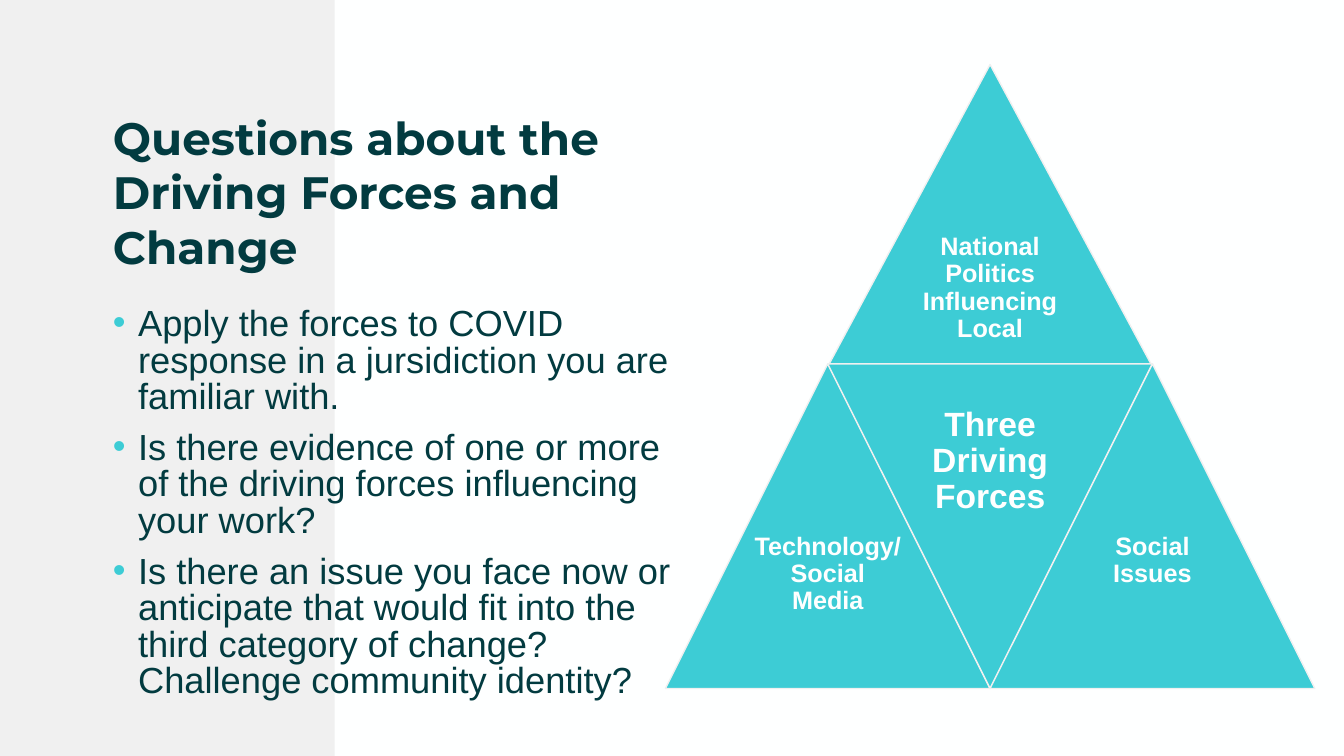
from lxml import etree
from pptx import Presentation
from pptx.dml.color import RGBColor
from pptx.enum import shapes, text
from pptx.oxml import ns
from pptx.util import Inches, Pt

TEAL = RGBColor(0x3D, 0xCC, 0xD5)
DARK = RGBColor(0x02, 0x3B, 0x40)
GREY = RGBColor(0xF0, 0xF0, 0xF0)
WHITE = RGBColor(0xFE, 0xFF, 0xFF)


def add_text(lines, box, size, color=WHITE, font="Arial", bold=True,
             align=text.PP_ALIGN.CENTER, anchor=text.MSO_ANCHOR.TOP,
             pads=(0.07, 0.07, 0.07, 0.07), pitch=0.9, gap=0, bullet=None):
    """Add a text box; pads run left, top, right, bottom in inches."""
    frame = slide.shapes.add_textbox(*map(Inches, box)).text_frame
    frame.word_wrap = True
    frame.vertical_anchor = anchor
    (frame.margin_left, frame.margin_top,
     frame.margin_right, frame.margin_bottom) = map(Inches, pads)
    for i, line in enumerate(lines):
        para = frame.paragraphs[0] if i == 0 else frame.add_paragraph()
        para.alignment = align
        para.line_spacing = pitch
        para.space_before = Pt(gap if i else 0)
        if bullet:
            props = para._p.get_or_add_pPr()
            props.set("marL", str(Inches(0.25)))
            props.set("indent", str(-Inches(0.25)))
            tint = etree.SubElement(props, ns.qn("a:buClr"))
            etree.SubElement(tint, ns.qn("a:srgbClr"), val=str(bullet))
            etree.SubElement(props, ns.qn("a:buFont"), typeface="Arial")
            etree.SubElement(props, ns.qn("a:buChar"), char="•")
        run = para.add_run()
        run.text = line
        run.font.name = font
        run.font.size = Pt(size)
        run.font.bold = bold
        run.font.color.rgb = color


def add_shape(kind, box, fill, line=None):
    shape = slide.shapes.add_shape(kind, *map(Inches, box))
    shape.shadow.inherit = False
    shape.fill.solid()
    shape.fill.fore_color.rgb = fill
    if line:
        shape.line.color.rgb = line
        shape.line.width = Pt(1)
    else:
        shape.line.fill.background()
    return shape


deck = Presentation()
deck.slide_width, deck.slide_height = Inches(13.33), Inches(7.5)
slide = deck.slides.add_slide(deck.slide_layouts[6])
slide.background.fill.solid()
slide.background.fill.fore_color.rgb = WHITE

add_shape(shapes.MSO_SHAPE.RECTANGLE, (0, 0, 3.32, 7.5), GREY)
add_text(["Questions about the Driving Forces and Change"],
         (1.12, 0.88, 5.01, 1.96), 32.4, color=DARK, font="Montserrat",
         align=text.PP_ALIGN.LEFT, pads=(0, 0.21, 0, 0), pitch=1.0)
add_text(["Apply the forces to COVID response in a jursidiction you are familiar with.",
          "Is there evidence of one or more of the driving forces influencing your work?",
          "Is there an issue you face now or anticipate that would fit into the "
          "third category of change? Challenge community identity?"],
         (1.12, 3.05, 5.73, 3.81), 25.9, color=DARK, bold=False,
         align=text.PP_ALIGN.LEFT, pads=(0, 0, 0, 0), pitch=0.84, gap=10, bullet=TEAL)

# Four triangles: one on top, three below, the middle one upside down
SIDE = 3.22
MID = 9.82
BASE = 3.61
forces = [
    ("National Politics Influencing Local", MID, 0.64, 3.46, False),
    ("Technology/ Social Media", MID - SIDE / 2, BASE, SIDE, False),
    ("Three Driving Forces", MID, BASE, SIDE, True),
    ("Social Issues", MID + SIDE / 2, BASE, SIDE, False),
]
for label, center, top, width, flip in forces:
    tri = add_shape(shapes.MSO_SHAPE.ISOSCELES_TRIANGLE,
                    (center - width / 2, top, width, SIDE), TEAL, GREY)
    left, half = center - width / 4, SIDE / 2
    if flip:
        tri.rotation = 180
        add_text([label], (left, top, width / 2, half), 24,
                 anchor=text.MSO_ANCHOR.BOTTOM, pads=(0.1, 0.2, 0.1, 0.1))
    else:
        add_text([label], (left, top + half, width / 2, half), 18)

deck.save("out.pptx")
